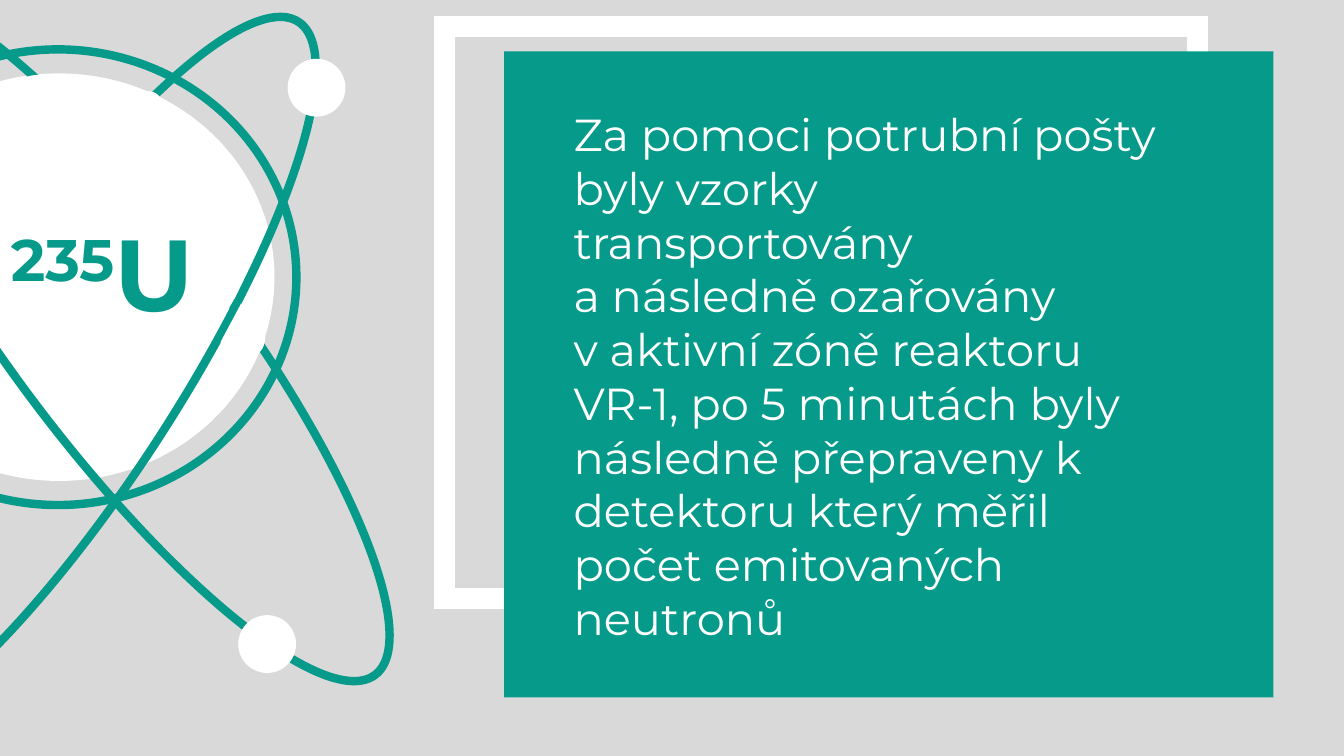
from lxml.etree import SubElement
from pptx import Presentation
from pptx.dml.color import RGBColor
from pptx.enum.shapes import MSO_SHAPE
from pptx.enum.text import MSO_AUTO_SIZE
from pptx.oxml.ns import qn
from pptx.util import Inches, Pt

GREY = RGBColor(0xD9, 0xD9, 0xD9)
WHITE = RGBColor(0xFF, 0xFF, 0xFF)
TEAL = RGBColor(0x06, 0x9A, 0x8B)
FONT = "Montserrat"
RECTANGLE, OVAL, CHORD = MSO_SHAPE.RECTANGLE, MSO_SHAPE.OVAL, MSO_SHAPE.CHORD

BODY = [
    "Za pomoci potrubní pošty byly vzorky transportovány",
    "a následně ozařovány",
    "v aktivní zóně reaktoru VR-1, po 5 minutách byly následně přepraveny "
    "k detektoru který měřil počet emitovaných neutronů",
]
MASS_NUMBER, SYMBOL = "235", "U"

FRAME = (4.41, 0.26, 7.47, 5.68)
PANEL = (5, 0.51, 7.63, 6.41)
NUCLEUS = (-1.51, 0.77, 4.19, 3.96)
ORBITS = [
    ((-1.79, 0.49, 4.73, 4.52), 0),
    ((0.11, -0.89, 2.16, 8.43), 323.1),
    ((-0.41, -0.46, 2.16, 8.43), 32.9),
]
NUCLEUS_COVERS = [
    (CHORD, (-1.46, 3.03, 1.54, 1.14), 244.7, (23.76, 153.07), None),
    (RECTANGLE, (-0.6, 1.75, 1.76, 0.53), 316.1, (), 1),
    (RECTANGLE, (-0.41, 2.23, 1.76, 0.66), 325.8, (), 1),
    (RECTANGLE, (1.01, 1.07, 0.61, 0.37), 316.1, (), 1),
    (OVAL, (1.32, 0.91, 0.29, 0.28), 0, (), 1),
    (CHORD, (-0.77, 0.93, 3.27, 2.92), 162.9, (24.18, 154.07), 1),
    (CHORD, (2.07, 3.05, 0.6, 0.43), 230.8, (27, 163.91), 1),
    (CHORD, (0.19, 0.67, 0.56, 0.76), 115.3, (), 1),
]
ELECTRON_SIZE = 0.56
ELECTRONS = [(2.86, 0.59), (2.37, 6.11)]


def add_figure(slide, kind, box, fill=None, line=None, width=None, rotation=0, adjustments=()):
    shape = slide.shapes.add_shape(kind, *map(Inches, box))
    shape.shadow.inherit = False
    shape.rotation = rotation
    for index, value in enumerate(adjustments):
        shape.adjustments[index] = value
    if fill is None:
        shape.fill.background()
    else:
        shape.fill.solid()
        shape.fill.fore_color.rgb = fill
    if width is None:
        shape.line.fill.background()
    else:
        shape.line.color.rgb = line
        shape.line.width = Pt(width)
        outline = shape._element.spPr.find(qn("a:ln"))
        SubElement(outline, qn("a:miter"), lim="800000")


def add_text_frame(slide, box, wrap):
    text_frame = slide.shapes.add_textbox(*map(Inches, box)).text_frame
    text_frame.word_wrap = wrap
    text_frame.auto_size = MSO_AUTO_SIZE.SHAPE_TO_FIT_TEXT
    return text_frame


def style_font(font, size, color, bold=False):
    font.name = FONT
    font.size = Pt(size)
    font.color.rgb = color
    font.bold = bold


def add_atom(slide):
    add_figure(slide, OVAL, NUCLEUS, WHITE, WHITE, 6)
    for box, rotation in ORBITS:
        add_figure(slide, OVAL, box, None, TEAL, 6, rotation)
    for kind, box, rotation, adjustments, width in NUCLEUS_COVERS:
        add_figure(slide, kind, box, WHITE, WHITE, width, rotation, adjustments)
    for left, top in ELECTRONS:
        add_figure(slide, OVAL, (left, top, ELECTRON_SIZE, ELECTRON_SIZE), WHITE, WHITE, 1)


def add_isotope(slide):
    paragraph = add_text_frame(slide, (0.01, 2.04, 2.39, 1.31), False).paragraphs[0]
    for text in (MASS_NUMBER, SYMBOL):
        run = paragraph.add_run()
        run.text = text
        style_font(run.font, 72, TEAL, True)
    paragraph.runs[0].font._element.set("baseline", "30000")


def add_body(slide):
    text_frame = add_text_frame(slide, (5.59, 1.01, 6.02, 5.49), True)
    text_frame.text = "\n".join(BODY)
    for paragraph in text_frame.paragraphs:
        style_font(paragraph.runs[0].font, 32, WHITE)


def main():
    presentation = Presentation()
    presentation.slide_width = Inches(13.33)
    presentation.slide_height = Inches(7.5)
    slide = presentation.slides.add_slide(presentation.slide_layouts[6])
    slide.background.fill.solid()
    slide.background.fill.fore_color.rgb = GREY
    add_figure(slide, RECTANGLE, FRAME, None, WHITE, 15)
    add_figure(slide, RECTANGLE, PANEL, TEAL)
    add_atom(slide)
    add_isotope(slide)
    add_body(slide)
    presentation.save("out.pptx")


if __name__ == "__main__":
    main()
